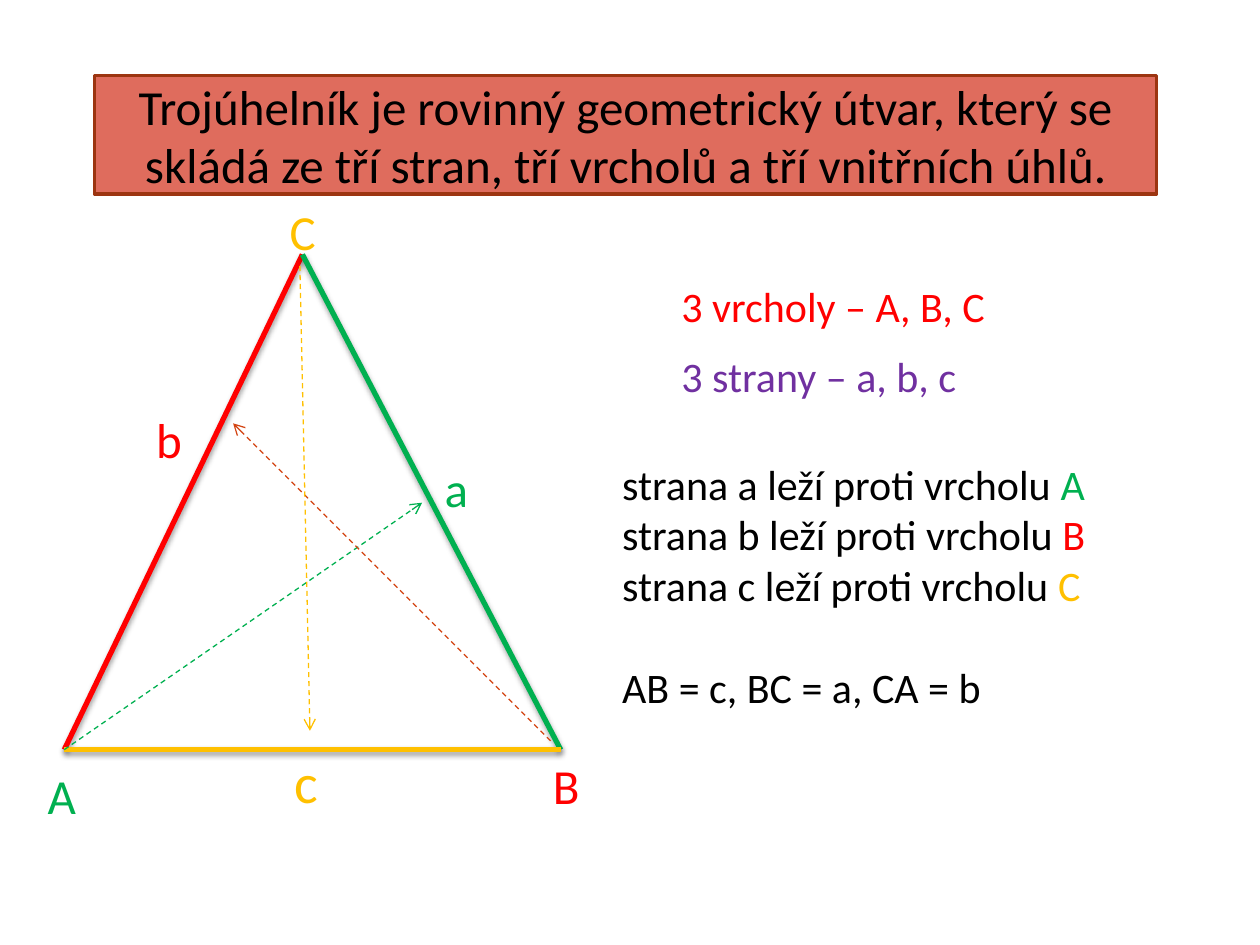
import pptx
import pptx.util
import pptx.dml.color
import pptx.enum.dml
import pptx.enum.shapes
import pptx.enum.text
import pptx.oxml
import pptx.oxml.ns

Inches, Pt = pptx.util.Inches, pptx.util.Pt
HUES = {"black": "000000", "red": "FF0000", "green": "00B050", "gold": "FFC000",
        "violet": "7030A0", "rust": "D34412", "salmon": "DF6C5D", "brown": "9C3511"}

TITLE = ("Trojúhelník je rovinný geometrický útvar, který se "
         "skládá ze tří stran, tří vrcholů a tří vnitřních úhlů.")
A, B, C = (0.51, 5.95), (4.45, 5.95), (2.4, 2.02)
SIDES = [(C, A, "red"), (C, B, "green"), (A, B, "gold")]
ARROWS = [(A, (3.35, 3.99), "green"),
          ((4.37, 5.88), (1.85, 3.36), "rust"),
          ((2.38, 2.11), (2.46, 5.8), "gold")]
# box, size, paragraphs made of (text, colour) runs
TEXTS = [
    ((2.2, 1.55, 0.42, 0.57), 28, [[("C", "gold")]]),
    ((4.29, 5.95, 0.42, 0.57), 28, [[("B", "red")]]),
    ((0.28, 6.03, 0.42, 0.57), 28, [[("A", "green")]]),
    ((3.43, 3.59, 0.55, 0.57), 28, [[("a", "green")]]),
    ((2.24, 5.88, 1.02, 0.64), 32, [[("c", "gold")]]),
    ((1.14, 3.2, 0.63, 0.57), 28, [[("b", "red")]]),
    ((5.31, 2.18, 3.62, 0.5), 24, [[("3 vrcholy – A, B, C", "red")]]),
    ((5.31, 2.73, 2.83, 0.5), 24, [[("3 strany – a, b, c", "violet")]]),
    ((4.84, 3.59, 4.57, 2.52), 24, [
        [(f"strana {side} leží proti vrcholu ", "black"), (side.upper(), hue)]
        for side, hue in (("a", "green"), ("b", "red"), ("c", "gold"))
    ] + [[("AB = c, BC = a, CA = b", "black")]]),
]
SHADE = ('<a:outerShdw blurRad="39370" dist="20320" dir="5400000" rotWithShape="0">'
         '<a:srgbClr val="000000"><a:alpha val="38000"/></a:srgbClr></a:outerShdw>')


def tint(hue):
    return pptx.dml.color.RGBColor.from_string(HUES[hue])


def style(para, size):
    para.font.name, para.font.size = "Calibri", Pt(size)


def draw(slide, start, end, hue, width, shade=""):
    """Add a straight line with the given effect XML, or with no effect."""
    line = slide.shapes.add_connector(
        pptx.enum.shapes.MSO_CONNECTOR.STRAIGHT, *map(Inches, start + end))
    line.line.color.rgb = tint(hue)
    line.line.width = Pt(width)
    line._element.spPr.append(pptx.oxml.parse_xml(
        f'<a:effectLst {pptx.oxml.ns.nsdecls("a")}>{shade}</a:effectLst>'))
    return line


def write(slide, box, size, paras):
    frame = slide.shapes.add_textbox(*map(Inches, box)).text_frame
    frame.word_wrap = True
    for i, runs in enumerate(paras):
        para = frame.add_paragraph() if i else frame.paragraphs[0]
        style(para, size)
        for text, hue in runs:
            run = para.add_run()
            run.text = text
            run.font.color.rgb = tint(hue)
    if len(paras) > 1:
        para.space_before = Pt(size * 1.22)


def head(slide):
    title = slide.shapes.title
    title.left, title.top, title.width, title.height = map(
        Inches, (0.75, 0.6, 8.43, 0.94))
    title.fill.solid()
    title.fill.fore_color.rgb = tint("salmon")
    title.line.color.rgb = tint("brown")
    title.line.width = Pt(2)
    frame = title.text_frame
    frame.text = TITLE
    frame.word_wrap = True
    frame.auto_size = pptx.enum.text.MSO_AUTO_SIZE.NONE
    frame.vertical_anchor = pptx.enum.text.MSO_ANCHOR.MIDDLE
    para = frame.paragraphs[0]
    para.alignment = pptx.enum.text.PP_ALIGN.CENTER
    style(para, 28)
    para.font.color.rgb = tint("black")


def main():
    deck = pptx.Presentation()
    deck.slide_width, deck.slide_height = Inches(10), Inches(7.5)
    slide = deck.slides.add_slide(deck.slide_layouts[5])
    head(slide)
    for start, end, hue in SIDES:
        draw(slide, start, end, hue, 3, SHADE)
    for box, size, paras in TEXTS:
        write(slide, box, size, paras)
    for start, end, hue in ARROWS:
        line = draw(slide, start, end, hue, 0.75)
        line.line.dash_style = pptx.enum.dml.MSO_LINE.DASH
        line.line._ln.append(pptx.oxml.parse_xml(
            f'<a:tailEnd {pptx.oxml.ns.nsdecls("a")} type="arrow"/>'))
    deck.save("out.pptx")


if __name__ == "__main__":
    main()
